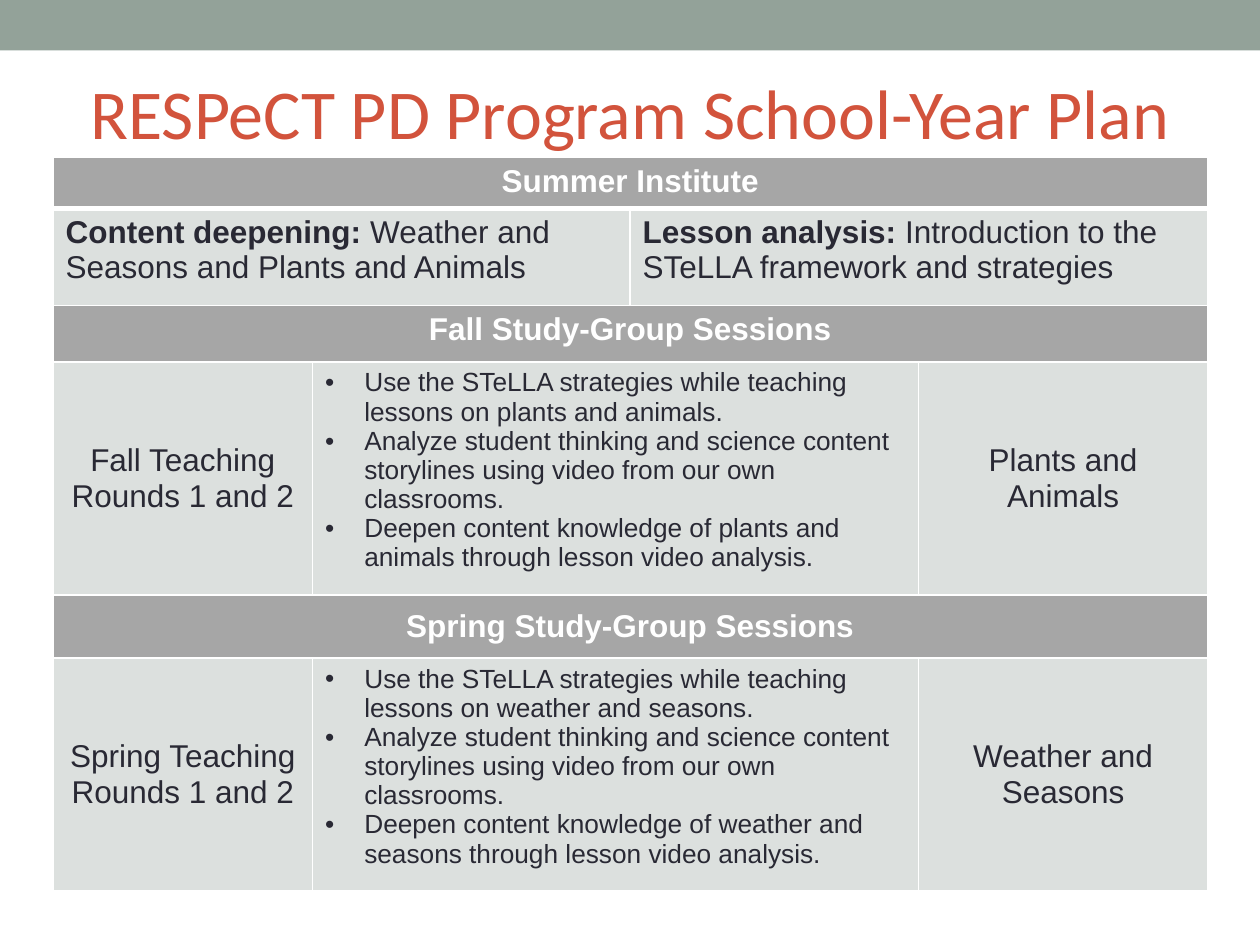
import dataclasses

import lxml.etree
import pptx
import pptx.dml.color
import pptx.enum.shapes
import pptx.enum.text
import pptx.oxml.ns
import pptx.util

Cm, Pt = pptx.util.Cm, pptx.util.Pt
ALIGN = pptx.enum.text.PP_ALIGN
ANCHOR = pptx.enum.text.MSO_ANCHOR
qn = pptx.oxml.ns.qn


@dataclasses.dataclass(frozen=True)
class Theme:
    bar: str = "93A299"
    title: str = "D2533C"
    header: str = "A6A6A6"
    body: str = "DCE0DE"
    dark: str = "292934"
    white: str = "FFFFFF"
    title_font: str = "Calibri"
    table_font: str = "Arial"
    title_size: int = 40
    table_size: int = 18
    bullet_size: int = 15
    rule: int = 1
    heavy_rule: int = 3


THEME = Theme()
COLUMNS = (5.23, 6.4, 5.82, 5.82)
ROWS = (0.98, 1.96, 1.14, 4.55, 1.27, 4.55)
SEASONS = (
    ("Fall", "Plants and Animals", ANCHOR.TOP),
    ("Spring", "Weather and Seasons", ANCHOR.MIDDLE),
)


def rgb(value):
    return pptx.dml.color.RGBColor.from_string(value)


def style_run(r, size, color, font=THEME.table_font, bold=False):
    r.font.size, r.font.name, r.font.bold = Pt(size), font, bold
    r.font.color.rgb = rgb(color)


def add_bar(s, left, top, width, height):
    sp = s.shapes.add_shape(pptx.enum.shapes.MSO_SHAPE.RECTANGLE,
                            Cm(left), Cm(top), Cm(width), Cm(height))
    sp.shadow.inherit = False
    sp.fill.solid()
    sp.fill.fore_color.rgb = rgb(THEME.bar)
    sp.line.fill.background()


def add_title(s, text, left, top, width, height):
    tf = s.shapes.add_textbox(Cm(left), Cm(top), Cm(width), Cm(height)).text_frame
    tf.word_wrap = True
    p = tf.paragraphs[0]
    p.text = text
    p.alignment = ALIGN.CENTER
    style_run(p.runs[0], THEME.title_size, THEME.title, THEME.title_font)


def set_borders(cell, top, bottom):
    """Draw white rules on all four sides; top and bottom are widths in points."""
    tcPr = cell._tc.get_or_add_tcPr()
    widths = {"lnL": THEME.rule, "lnR": THEME.rule, "lnT": top, "lnB": bottom}
    for tag, width in widths.items():
        ln = lxml.etree.SubElement(tcPr, qn("a:" + tag), w=str(Pt(width)))
        fill = lxml.etree.SubElement(ln, qn("a:solidFill"))
        lxml.etree.SubElement(fill, qn("a:srgbClr"), val=THEME.white)


def fill_header(cell, text, anchor=ANCHOR.TOP):
    cell.text_frame.text = text
    cell.vertical_anchor = anchor
    cell.fill.fore_color.rgb = rgb(THEME.header)
    p = cell.text_frame.paragraphs[0]
    p.alignment = ALIGN.CENTER
    style_run(p.runs[0], THEME.table_size, THEME.white, bold=True)


def fill_topic(cell, label, text):
    p = cell.text_frame.paragraphs[0]
    p.text = label
    p.add_run().text = text
    for r, bold in zip(p.runs, (True, False)):
        style_run(r, THEME.table_size, THEME.dark, bold=bold)


def fill_centred(cell, text):
    cell.text_frame.text = text
    cell.vertical_anchor = ANCHOR.MIDDLE
    for p in cell.text_frame.paragraphs:
        p.alignment = ALIGN.CENTER
        style_run(p.runs[0], THEME.table_size, THEME.dark)


def fill_bullets(cell, items):
    cell.text_frame.text = "\n".join(items)
    indent = Cm(0.79)
    for p in cell.text_frame.paragraphs:
        style_run(p.runs[0], THEME.bullet_size, THEME.dark)
        pPr = p._p.get_or_add_pPr()
        pPr.set("marL", str(indent))
        pPr.set("indent", str(-indent))
        lxml.etree.SubElement(pPr, qn("a:buFont"), typeface=THEME.table_font)
        lxml.etree.SubElement(pPr, qn("a:buChar"), char="•")


def fill_season(table, row, season, topic, anchor):
    """Fill a season's header row and the row of details below it."""
    subject = topic.lower()
    fill_header(table.cell(row, 0), f"{season} Study-Group Sessions", anchor)
    fill_centred(table.cell(row + 1, 0), f"{season} Teaching\nRounds 1 and 2")
    fill_bullets(table.cell(row + 1, 1), (
        f"Use the STeLLA strategies while teaching lessons on {subject}.",
        "Analyze student thinking and science content storylines using video "
        "from our own classrooms.",
        f"Deepen content knowledge of {subject} through lesson video analysis.",
    ))
    fill_centred(table.cell(row + 1, 3), topic)


def add_plan(s, left, top, width, height):
    table = s.shapes.add_table(len(ROWS), len(COLUMNS), Cm(left), Cm(top),
                               Cm(width), Cm(height)).table
    for column, share in zip(table.columns, COLUMNS):
        column.width = Cm(width * share / sum(COLUMNS))
    for row, share in zip(table.rows, ROWS):
        row.height = Cm(height * share / sum(ROWS))

    for i in range(len(ROWS)):
        for j in range(len(COLUMNS)):
            cell = table.cell(i, j)
            set_borders(cell,
                        top=THEME.heavy_rule if i == 1 else THEME.rule,
                        bottom=THEME.heavy_rule if i == 0 else THEME.rule)
            cell.fill.solid()
            cell.fill.fore_color.rgb = rgb(THEME.body)

    for row in (0, 2, 4):
        table.cell(row, 0).merge(table.cell(row, 3))
    for row, first in ((1, 0), (1, 2), (3, 1), (5, 1)):
        table.cell(row, first).merge(table.cell(row, first + 1))

    fill_header(table.cell(0, 0), "Summer Institute")
    fill_topic(table.cell(1, 0), "Content deepening: ",
               "Weather and Seasons and Plants and Animals")
    fill_topic(table.cell(1, 2), "Lesson analysis: ",
               "Introduction to the STeLLA framework and strategies")
    for i, season in enumerate(SEASONS):
        fill_season(table, 2 + 2 * i, *season)


def main():
    prs = pptx.Presentation()
    prs.slide_width, prs.slide_height = Cm(25.4), Cm(19.05)
    s = prs.slides.add_slide(prs.slide_layouts[6])
    add_bar(s, 0, 0, 25.4, 1.02)
    add_title(s, "RESPeCT PD Program School-Year Plan", 1.27, 1.27, 22.86, 16.94)
    add_plan(s, 1.07, 3.18, sum(COLUMNS), sum(ROWS))
    prs.save("out.pptx")


if __name__ == "__main__":
    main()
